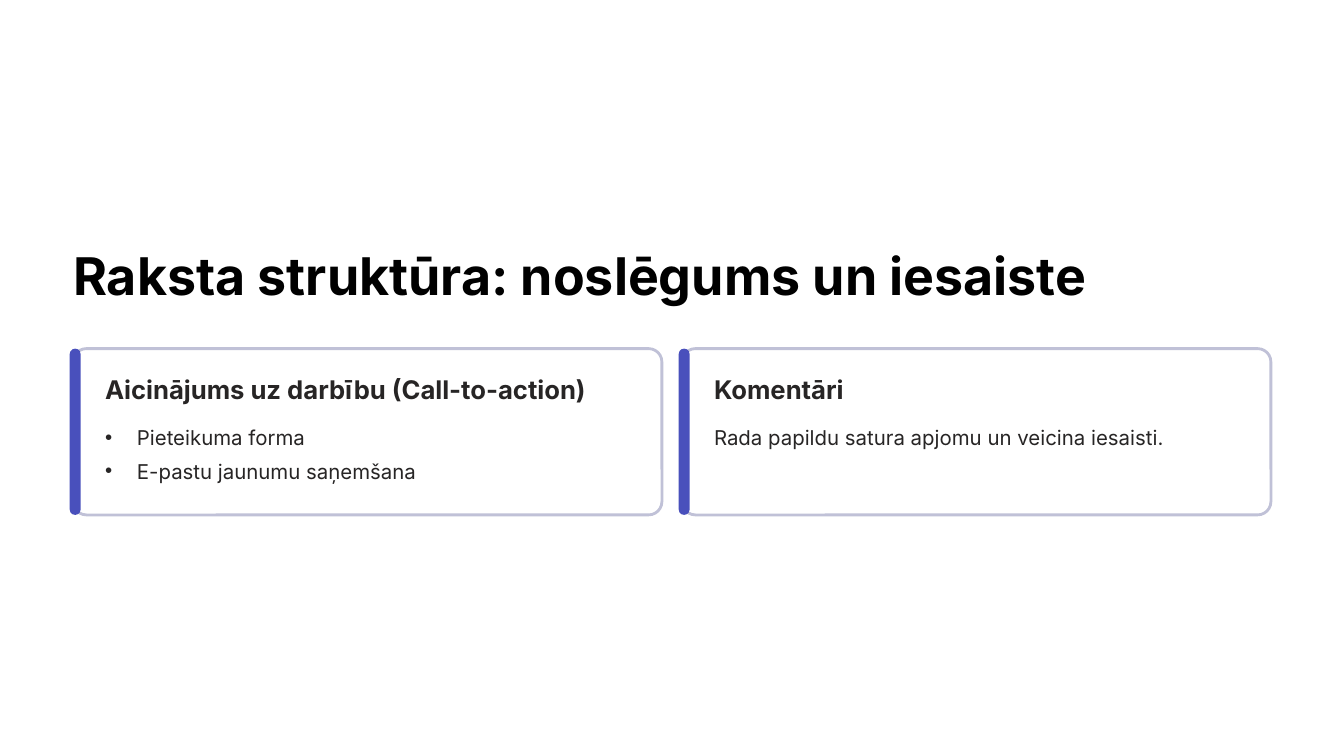
from lxml.etree import SubElement as Sub
from pptx import Presentation
from pptx.dml.color import RGBColor as Rgb
from pptx.enum.shapes import MSO_SHAPE as Kind
from pptx.enum.text import MSO_ANCHOR as Anchor, MSO_AUTO_SIZE as Fit, PP_ALIGN as Align
from pptx.oxml.ns import qn
from pptx.util import Inches, Pt

theme = {
    "font": "Inter",
    "white": Rgb.from_string("FFFFFF"),
    "edge": Rgb.from_string("C0C1D7"),
    "bar": Rgb.from_string("4950BC"),
    "title": {"size": 44.5, "lead": 55.5, "bold": True, "ink": "000000"},
    "head": {"size": 22, "lead": 27.5, "bold": True, "ink": "272525"},
    "body": {"size": 17.5, "lead": 28.5, "bold": False, "ink": "272525"},
}

cards = [
    ("Aicinājums uz darbību (Call-to-action)",
     ["Pieteikuma forma", "E-pastu jaunumu saņemšana"], True),
    ("Komentāri", ["Rada papildu satura apjomu un veicina iesaisti."], False),
]

deck = Presentation()
deck.slide_width, deck.slide_height = Inches(16), Inches(9)
col, row = deck.slide_width / 16, deck.slide_height / 9
slide = deck.slides.add_slide(deck.slide_layouts.get_by_name("Comparison"))
slide.background.fill.solid()
slide.background.fill.fore_color.rgb = theme["white"]
holders = {box.placeholder_format.idx: box for box in slide.placeholders}


def plate(x, y, w, h, turn, fill):
    form = slide.shapes.add_shape(
        Kind.ROUNDED_RECTANGLE, int(x * col), int(y * row), int(w * col), int(h * row))
    form.shadow.inherit = False
    form.adjustments[0] = turn
    form.fill.solid()
    form.fill.fore_color.rgb = fill
    form.line.fill.background()
    return form


def write(box, x, y, w, h, lines, style, dots=False):
    box.element.getparent().append(box.element)
    place = {"left": x * col, "top": y * row, "width": w * col, "height": h * row}
    for name, size in place.items():
        setattr(box, name, int(size))
    frame = box.text_frame
    frame.text = "\n".join(lines)
    setup = {"margin_left": 0, "margin_right": 0, "margin_top": 0, "margin_bottom": 0,
             "word_wrap": True, "auto_size": Fit.NONE, "vertical_anchor": Anchor.TOP}
    for name, value in setup.items():
        setattr(frame, name, value)
    look = theme[style]
    for para in frame.paragraphs:
        para.alignment = Align.LEFT
        para.line_spacing = Pt(look["lead"])
        para.space_before = para.space_after = Pt(0)
        props = para._p.get_or_add_pPr()
        inset = Inches(0.38) if dots else 0
        props.set("marL", str(inset))
        props.set("indent", str(-inset))
        if dots:
            Sub(props, qn("a:buChar")).set("char", "•")
        else:
            Sub(props, qn("a:buNone"))
        font = para.runs[0].font
        for name, value in {"name": theme["font"], "size": Pt(look["size"]),
                            "bold": look["bold"]}.items():
            setattr(font, name, value)
        font.color.rgb = Rgb.from_string(look["ink"])


write(holders[0], 0.87, 2.87, 14.26, 0.78,
      ["Raksta struktūra: noslēgums un iesaiste"], "title")

for num, (head, lines, dots) in enumerate(cards):
    left = 0.87 + num * 7.25
    card = plate(left, 4.15, 7.01, 1.98, 0.08, theme["white"])
    card.line.color.rgb = theme["edge"]
    card.line.width = Pt(2.4)
    plate(left - 0.04, 4.15, 0.13, 1.98, 0.5, theme["bar"])
    write(holders[1 + 2 * num], left + 0.38, 4.43, 6.35, 0.39, [head], "head")
    write(holders[2 + 2 * num], left + 0.38, 4.96, 6.35, 0.44 * len(lines),
          lines, "body", dots)

deck.save("out.pptx")
